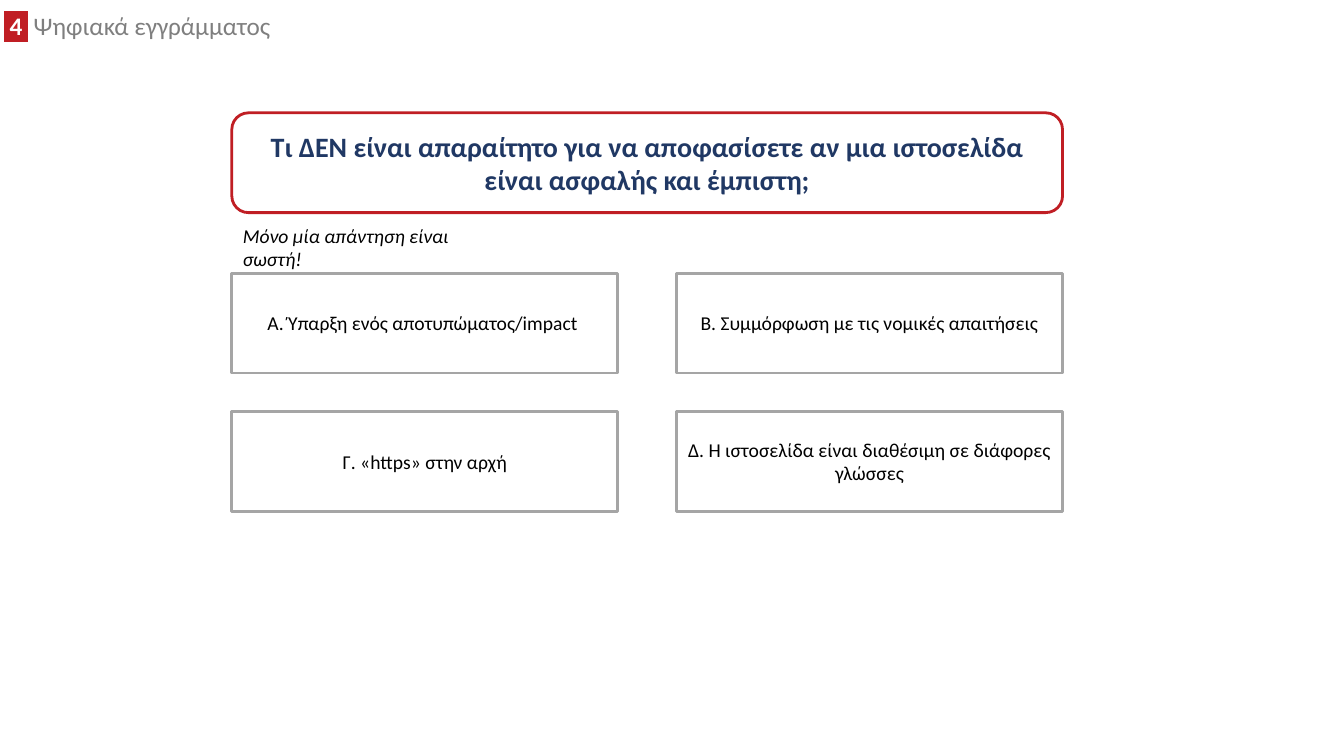
from dataclasses import dataclass

from lxml.etree import SubElement
from pptx import Presentation
from pptx.dml.color import RGBColor as Color
from pptx.enum.shapes import MSO_SHAPE as Shape
from pptx.enum.text import MSO_ANCHOR as Anchor, MSO_AUTO_SIZE as AutoSize, PP_ALIGN as Align
from pptx.oxml.ns import qn
from pptx.util import Pt


@dataclass(frozen=True)
class Theme:
    font: str = "Calibri"
    white: str = "FFFFFF"
    black: str = "000000"
    red: str = "C01E24"
    navy: str = "203864"
    header_gray: str = "7F7F7F"
    border_gray: str = "A5A5A5"
    header_size: float = 18
    question_size: float = 20
    body_size: float = 14
    border_width: float = 2


@dataclass(frozen=True)
class Box:
    left: float
    top: float
    width: float
    height: float

    def lengths(self):
        return [Pt(value) for value in (self.left, self.top, self.width, self.height)]


THEME = Theme()
ANSWERS = (
    "Α. Ύπαρξη ενός αποτυπώματος/impact ",
    "Β. Συμμόρφωση με τις νομικές απαιτήσεις",
    "Γ. «https» στην αρχή",
    "Δ. Η ιστοσελίδα είναι διαθέσιμη σε διάφορες γλώσσες",
)


def set_font(font, size, color):
    font.name = THEME.font
    font.size = Pt(size)
    font.color.rgb = Color.from_string(color)


def add_text_box(slide, box):
    """Add a wrapping text box and return its first paragraph."""
    frame = slide.shapes.add_textbox(*box.lengths()).text_frame
    frame.word_wrap = True
    frame.auto_size = AutoSize.SHAPE_TO_FIT_TEXT
    return frame.paragraphs[0]


def add_card(slide, box, kind, text, border, size, color):
    """Add a white outlined shape with centred text and return its paragraph."""
    shape = slide.shapes.add_shape(kind, *box.lengths())
    shape.shadow.inherit = False
    shape.fill.solid()
    shape.fill.fore_color.rgb = Color.from_string(THEME.white)
    shape.line.color.rgb = Color.from_string(border)
    shape.line.width = Pt(THEME.border_width)
    frame = shape.text_frame
    frame.word_wrap = True
    frame.vertical_anchor = Anchor.MIDDLE
    paragraph = frame.paragraphs[0]
    paragraph.text = text
    paragraph.alignment = Align.CENTER
    set_font(paragraph.font, size, color)
    return paragraph


def add_header(slide, box, number, title):
    paragraph = add_text_box(slide, box)
    paragraph.line_spacing = 0.8
    set_font(paragraph.font, THEME.header_size, THEME.header_gray)
    badge = paragraph.add_run()
    badge.text = f" {number} "
    badge.font.bold = True
    badge.font.color.rgb = Color.from_string(THEME.white)
    highlight = SubElement(badge.font._element, qn("a:highlight"))
    SubElement(highlight, qn("a:srgbClr"), val=THEME.red)
    paragraph.add_run().text = f" {title}"


def add_question(slide, box, text):
    paragraph = add_card(slide, box, Shape.ROUNDED_RECTANGLE, text,
                         THEME.red, THEME.question_size, THEME.navy)
    paragraph.font.bold = True


def add_hint(slide, box, text):
    paragraph = add_text_box(slide, box)
    paragraph.text = text
    set_font(paragraph.font, THEME.body_size, THEME.black)
    paragraph.font.italic = True


def add_answers(slide, box, answers, columns=2, column_gap=41.8, row_gap=27.4):
    rows = -(-len(answers) // columns)
    width = (box.width - column_gap * (columns - 1)) / columns
    height = (box.height - row_gap * (rows - 1)) / rows
    for index, answer in enumerate(answers):
        row, column = divmod(index, columns)
        cell = Box(box.left + column * (width + column_gap),
                   box.top + row * (height + row_gap), width, height)
        add_card(slide, cell, Shape.RECTANGLE, answer,
                 THEME.border_gray, THEME.body_size, THEME.black)


def add_quiz(slide, box, question, hint, answers):
    add_question(slide, Box(box.left, box.top, box.width, 71.3), question)
    add_answers(slide, Box(box.left, box.top + 114.5, box.width, 170), answers)
    add_hint(slide, Box(box.left + 0.7, box.top + 75.6, 170, 24.5), hint)


def main():
    presentation = Presentation()
    presentation.slide_width, presentation.slide_height = Pt(960), Pt(540)
    slide = presentation.slides.add_slide(presentation.slide_layouts[6])
    add_header(slide, Box(-4.3, 7.9, 685.4, 25.2), 4, "Ψηφιακά εγγράμματος")
    add_quiz(slide, Box(165.6, 80.6, 593.4, 284.5),
             "Τι ΔΕΝ είναι απαραίτητο για να αποφασίσετε αν μια ιστοσελίδα "
             "είναι ασφαλής και έμπιστη;",
             "Μόνο μία απάντηση είναι σωστή!", ANSWERS)
    presentation.save("out.pptx")


if __name__ == "__main__":
    main()
